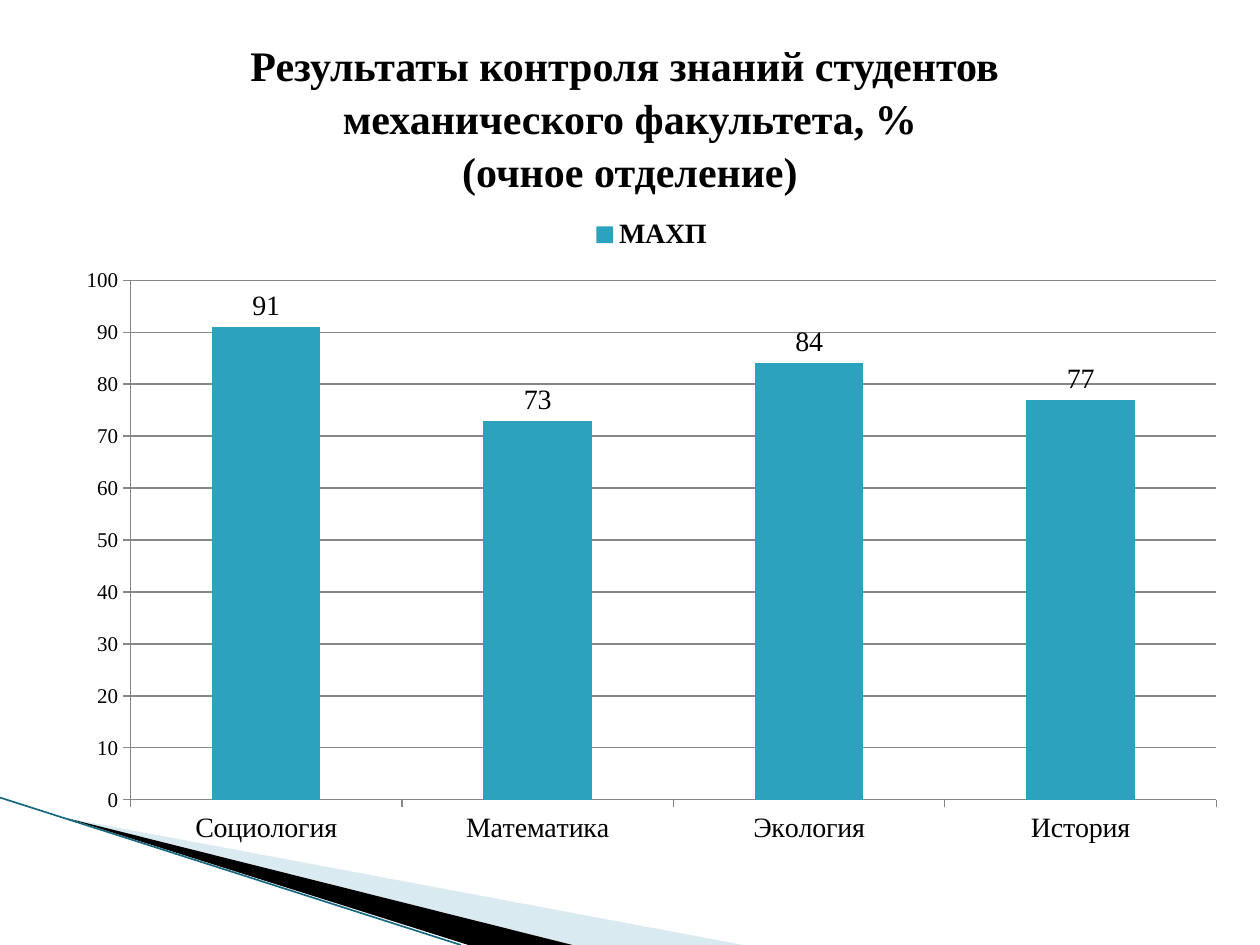
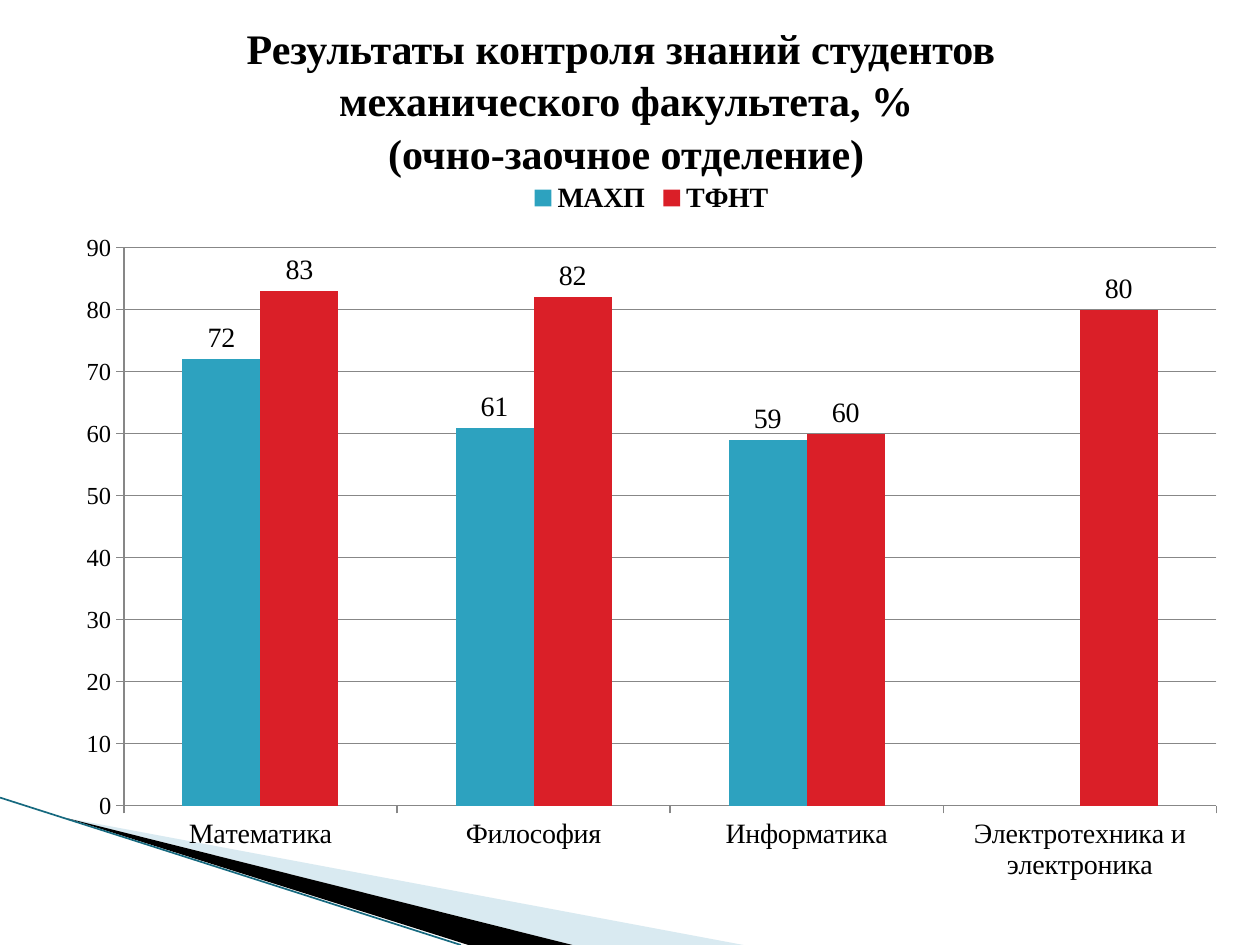
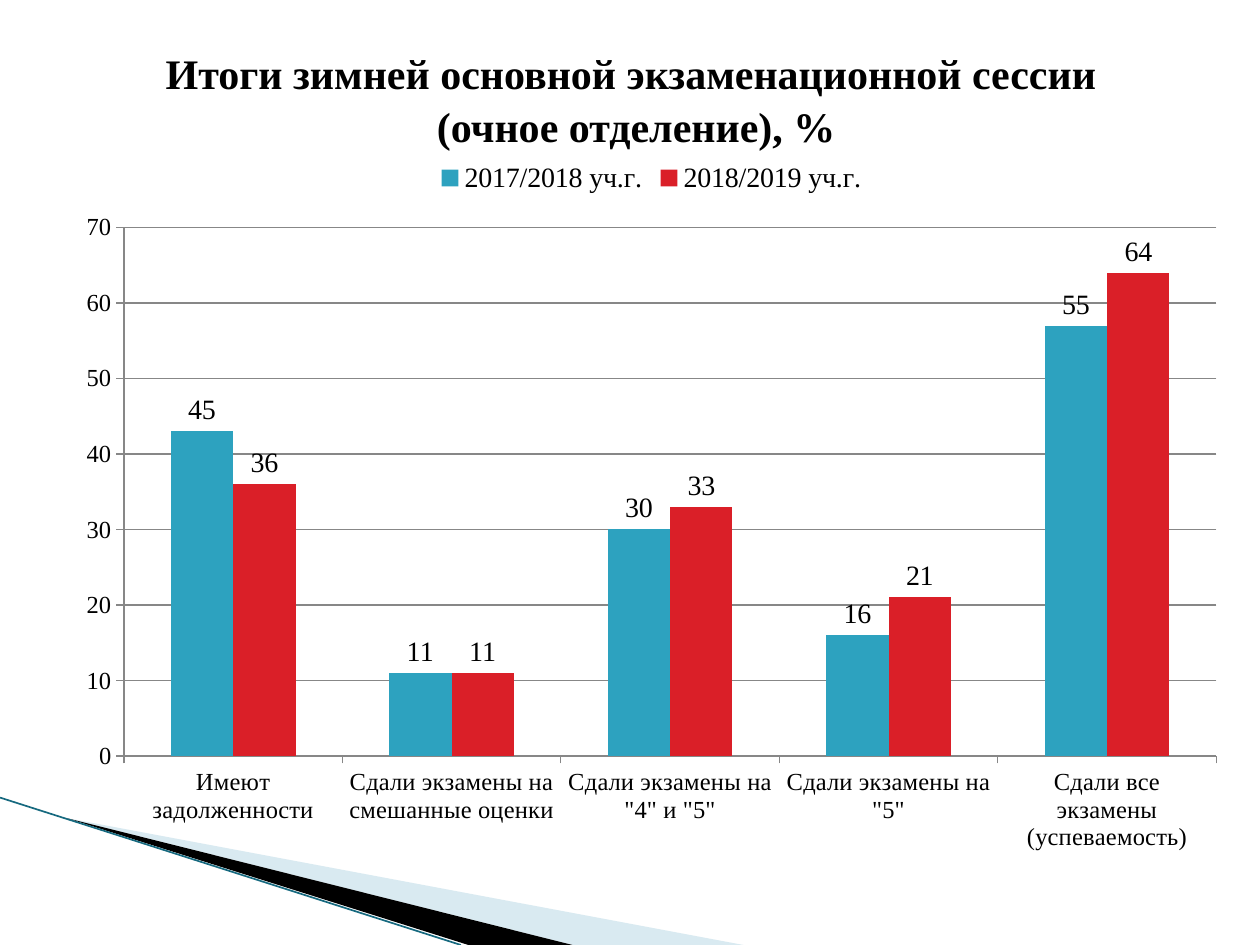
from lxml import etree
from pptx import Presentation
from pptx.chart.data import CategoryChartData
from pptx.dml.color import RGBColor
from pptx.enum.chart import XL_CHART_TYPE, XL_LABEL_POSITION, XL_LEGEND_POSITION, XL_TICK_MARK
from pptx.enum.shapes import MSO_CONNECTOR
from pptx.enum.text import MSO_ANCHOR, PP_ALIGN
from pptx.oxml.ns import qn
from pptx.util import Inches, Pt

COLUMNS = XL_CHART_TYPE.COLUMN_CLUSTERED
OUTSIDE_END = XL_LABEL_POSITION.OUTSIDE_END
LEGEND_TOP = XL_LEGEND_POSITION.TOP
TICK_OUTSIDE = XL_TICK_MARK.OUTSIDE
STRAIGHT = MSO_CONNECTOR.STRAIGHT
MIDDLE = MSO_ANCHOR.MIDDLE
CENTER = PP_ALIGN.CENTER

WIDTH, HEIGHT = Inches(10), Inches(7.5)
FONT = "Times New Roman"
COLORS = {"text": "000000", "first": "2DA2BF", "second": "DA1F28", "grid": "878787",
          "pale": "A0CBDC", "dark": "000000", "edge": "16697F"}
BAND_BOX = (0, 84.4, 59, 15.6)

SLIDES = [
    {"title": "Результаты контроля знаний студентов \vмеханического факультета, %\v(очное отделение)",
     "title_box": (5, 4, 90, 16.67), "chart_box": (5, 21.6, 93.4, 69.07),
     "size": 12, "cat_size": 16, "legend_bold": True, "top": 100,
     "cats": ["Социология", "Математика", "Экология", "История"],
     "series": {"МАХП": [91, 73, 84, 77]}},
    {"title": "Результаты контроля знаний студентов \vмеханического факультета, %\v(очно-заочное отделение)",
     "title_box": (4.7, 2.13, 90, 16.67), "chart_box": (5, 17.73, 93.4, 77.07),
     "size": 14, "cat_size": 16, "legend_bold": True, "top": 90,
     "cats": ["Математика", "Философия", "Информатика", "Электротехника и электроника"],
     "series": {"МАХП": [72, 61, 59, None], "ТФНТ": [83, 82, 60, 80]}},
    {"title": "Итоги зимней основной экзаменационной сессии \v(очное отделение), %",
     "title_box": (5.5, 4.13, 90, 12.53), "chart_box": (5, 15.6, 93.4, 76),
     "size": 14, "cat_size": 14, "legend_bold": False, "top": 70,
     "cats": ["Имеют задолженности", "Сдали экзамены на смешанные оценки",
              'Сдали экзамены на "4" и "5"', 'Сдали экзамены на "5"',
              "Сдали все экзамены (успеваемость)"],
     "series": {"2017/2018 уч.г.": [43, 11, 30, 16, 57], "2018/2019 уч.г.": [36, 11, 33, 21, 64]},
     "custom_labels": {0: "45", 4: "55"}},
]


def rgb(name):
    """Return the named colour."""
    return RGBColor.from_string(COLORS[name])


def to_emu(box):
    """Turn a box in percent of the slide into slide units."""
    x, y, w, h = box
    return (int(WIDTH * x / 100), int(HEIGHT * y / 100),
            int(WIDTH * w / 100), int(HEIGHT * h / 100))


def set_font(font, size, bold=False):
    """Apply the shared typeface and colour."""
    font.name, font.size, font.bold = FONT, Pt(size), bold
    font.color.rgb = rgb("text")


def write(tf, text, size=24, bold=False, align=CENTER, spacing=None):
    """Write one formatted paragraph into a text frame."""
    p = tf.paragraphs[0]
    p.text, p.alignment, p.line_spacing = text, align, spacing
    for r in p.runs:
        set_font(r.font, size, bold)


def add_wedge(s, points, color, opacity=100):
    """Add a filled outline without a border."""
    fb = s.shapes.build_freeform(*points[0], scale=1.0)
    fb.add_line_segments(points[1:], close=True)
    sp = fb.convert_to_shape()
    sp.shadow.inherit = False
    sp.fill.solid()
    sp.fill.fore_color.rgb = rgb(color)
    sp.line.fill.background()
    if opacity < 100:
        clr = sp.fill._xPr.find(".//" + qn("a:srgbClr"))
        etree.SubElement(clr, qn("a:alpha")).set("val", str(opacity * 1000))


def add_band(s, box):
    """Draw the corner band inside the box."""
    x, y, w, h = to_emu(box)

    def at(u, v):
        """Place a share of the box on the slide."""
        return int(x + u * w), int(y + v * h)

    add_wedge(s, [at(0.09, 0.14), at(1, 1), at(0.77, 1)], "pale", 40)
    add_wedge(s, [at(0.09, 0.14), at(0.77, 1), at(0.63, 1)], "dark")
    edge = s.shapes.add_connector(STRAIGHT, *at(0, 0), *at(0.62, 1))
    edge.line.color.rgb = rgb("edge")
    edge.line.width = Pt(0.95)
    etree.SubElement(edge._element.spPr, qn("a:effectLst"))


def add_title(s, box, text):
    """Add the centred title."""
    tf = s.shapes.add_textbox(*to_emu(box)).text_frame
    tf.word_wrap = True
    tf.vertical_anchor = MIDDLE
    write(tf, text, bold=True, spacing=1.05)


def style_axis(axis, size):
    """Give an axis its font, ticks and line."""
    set_font(axis.tick_labels.font, size)
    axis.major_tick_mark = TICK_OUTSIDE
    axis.format.line.color.rgb = rgb("grid")
    axis.format.line.width = Pt(0.75)


def add_column_chart(s, box, d):
    """Add the clustered column chart with value labels."""
    data = CategoryChartData()
    data.categories = d["cats"]
    for name, values in d["series"].items():
        data.add_series(name, values)
    chart = s.shapes.add_chart(COLUMNS, *to_emu(box), data).chart
    set_font(chart.font, d["size"])
    chart.has_title = False
    chart.has_legend = True
    chart.legend.position = LEGEND_TOP
    chart.legend.include_in_layout = False
    set_font(chart.legend.font, 16, d["legend_bold"])

    style_axis(chart.category_axis, d["cat_size"])
    axis = chart.value_axis
    style_axis(axis, d["size"])
    axis.minimum_scale, axis.maximum_scale, axis.major_unit = 0, d["top"], 10
    axis.has_major_gridlines = True
    axis.major_gridlines.format.line.color.rgb = rgb("grid")
    axis.major_gridlines.format.line.width = Pt(0.75)

    plot = chart.plots[0]
    plot.gap_width, plot.overlap, plot.vary_by_categories = 150, 0, False
    for series, color in zip(plot.series, ("first", "second")):
        series.format.fill.solid()
        series.format.fill.fore_color.rgb = rgb(color)
        labels = series.data_labels
        labels.show_value = True
        labels.position = OUTSIDE_END
        set_font(labels.font, 16)
    for index, text in d.get("custom_labels", {}).items():
        label = plot.series[0].points[index].data_label
        write(label.text_frame, text, size=16)
        label.position = OUTSIDE_END


def add_chart_slide(prs, d):
    """Build one slide with band, title and chart."""
    s = prs.slides.add_slide(prs.slide_layouts[6])
    add_band(s, BAND_BOX)
    add_title(s, d["title_box"], d["title"])
    add_column_chart(s, d["chart_box"], d)


def main():
    """Build and save the presentation."""
    prs = Presentation()
    prs.slide_width, prs.slide_height = WIDTH, HEIGHT
    for d in SLIDES:
        add_chart_slide(prs, d)
    prs.save("out.pptx")


if __name__ == "__main__":
    main()
